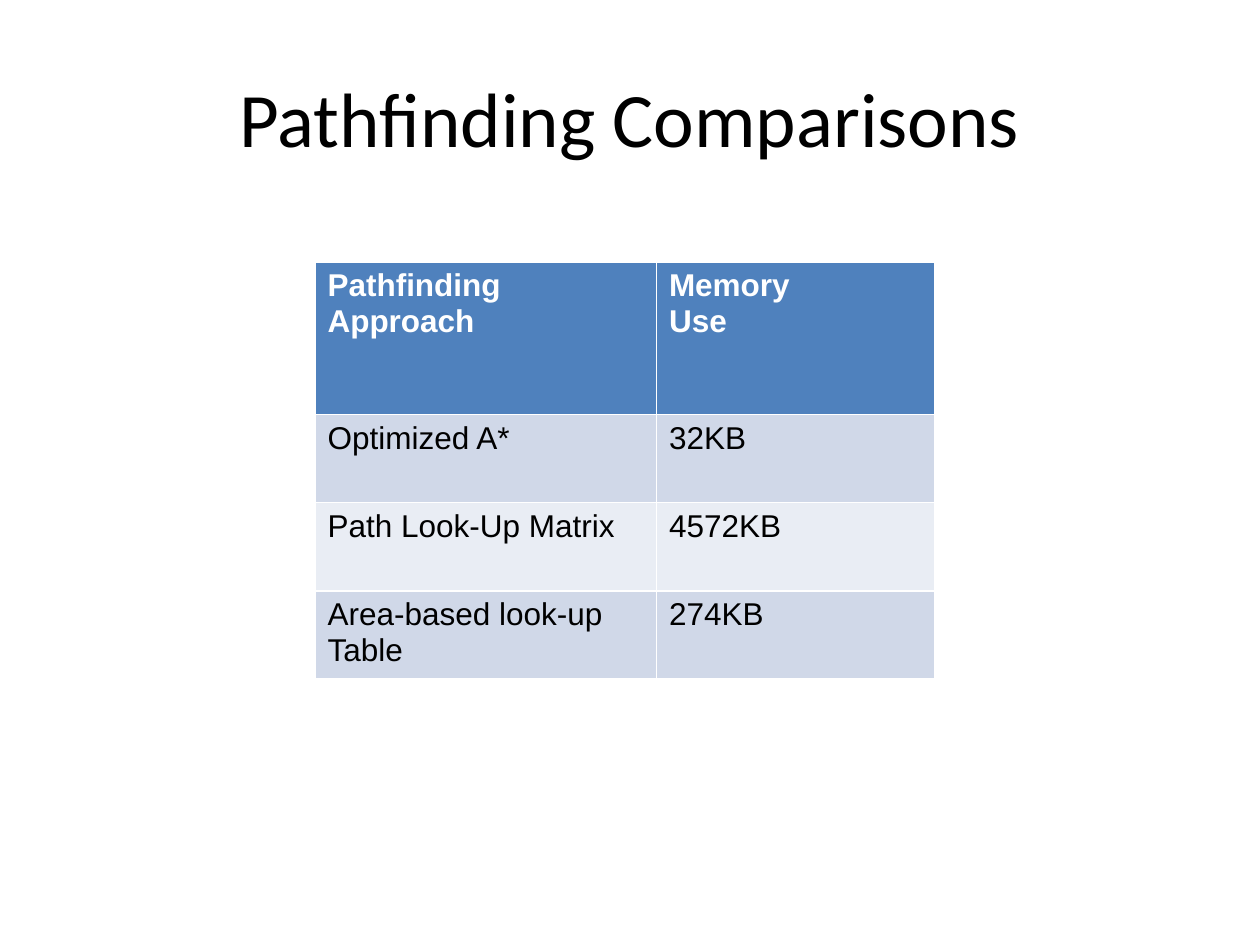
from dataclasses import dataclass

from pptx import Presentation
from pptx.dml.color import RGBColor as Color
from pptx.enum.text import MSO_ANCHOR as Anchor, PP_ALIGN as Align
from pptx.util import Inches, Pt


@dataclass(frozen=True)
class Theme:
    title_font: str = "Calibri"
    table_font: str = "Arial"
    title_size: int = 44
    table_size: int = 18
    text: str = "000000"
    header_text: str = "FFFFFF"
    header_fill: str = "4F81BD"
    band_fills: tuple = ("D0D8E8", "E9EDF4")


class SlideBuilder:
    def __init__(self, slide, theme):
        self.slide = slide
        self.theme = theme

    def format_font(self, font, name, size, color, bold=False):
        font.name = name
        font.size = Pt(size)
        font.bold = bold
        font.color.rgb = Color.from_string(color)

    def title(self, text, left, top, width, height):
        shape = self.slide.shapes.title
        shape.left, shape.top = Inches(left), Inches(top)
        shape.width, shape.height = Inches(width), Inches(height)
        frame = shape.text_frame
        frame.text = text
        frame.vertical_anchor = Anchor.MIDDLE
        paragraph = frame.paragraphs[0]
        paragraph.alignment = Align.CENTER
        self.format_font(paragraph.font, self.theme.title_font,
                         self.theme.title_size, self.theme.text)

    def table(self, rows, left, top, column_widths, row_heights):
        table = self.slide.shapes.add_table(
            len(rows), len(column_widths), Inches(left), Inches(top),
            Inches(sum(column_widths)), Inches(sum(row_heights))).table
        for column, width in zip(table.columns, column_widths):
            column.width = Inches(width)
        for row, height in zip(table.rows, row_heights):
            row.height = Inches(height)
        for row_index, texts in enumerate(rows):
            for column_index, text in enumerate(texts):
                self.cell(table.cell(row_index, column_index), text, row_index)

    def cell(self, cell, text, row_index):
        theme = self.theme
        is_header = row_index == 0
        band = theme.band_fills[(row_index - 1) % len(theme.band_fills)]
        cell.fill.solid()
        cell.fill.fore_color.rgb = Color.from_string(
            theme.header_fill if is_header else band)
        cell.text = text
        for paragraph in cell.text_frame.paragraphs:
            self.format_font(paragraph.font, theme.table_font, theme.table_size,
                             theme.header_text if is_header else theme.text,
                             is_header)


def main():
    presentation = Presentation()
    presentation.slide_width, presentation.slide_height = Inches(10), Inches(7.5)
    slide = presentation.slides.add_slide(
        presentation.slide_layouts.get_by_name("Title Only"))
    builder = SlideBuilder(slide, Theme())
    builder.title("Pathfinding Comparisons", 0.5, 0.3, 9, 1.25)
    comparisons = [
        ("Pathfinding\nApproach", "Memory\nUse"),
        ("Optimized A*", "32KB"),
        ("Path Look-Up Matrix", "4572KB"),
        ("Area-based look-up Table", "274KB"),
    ]
    builder.table(comparisons, 2.5, 2.08, (2.71, 2.21), (1.21, 0.7, 0.7, 0.7))
    presentation.save("out.pptx")


if __name__ == "__main__":
    main()
